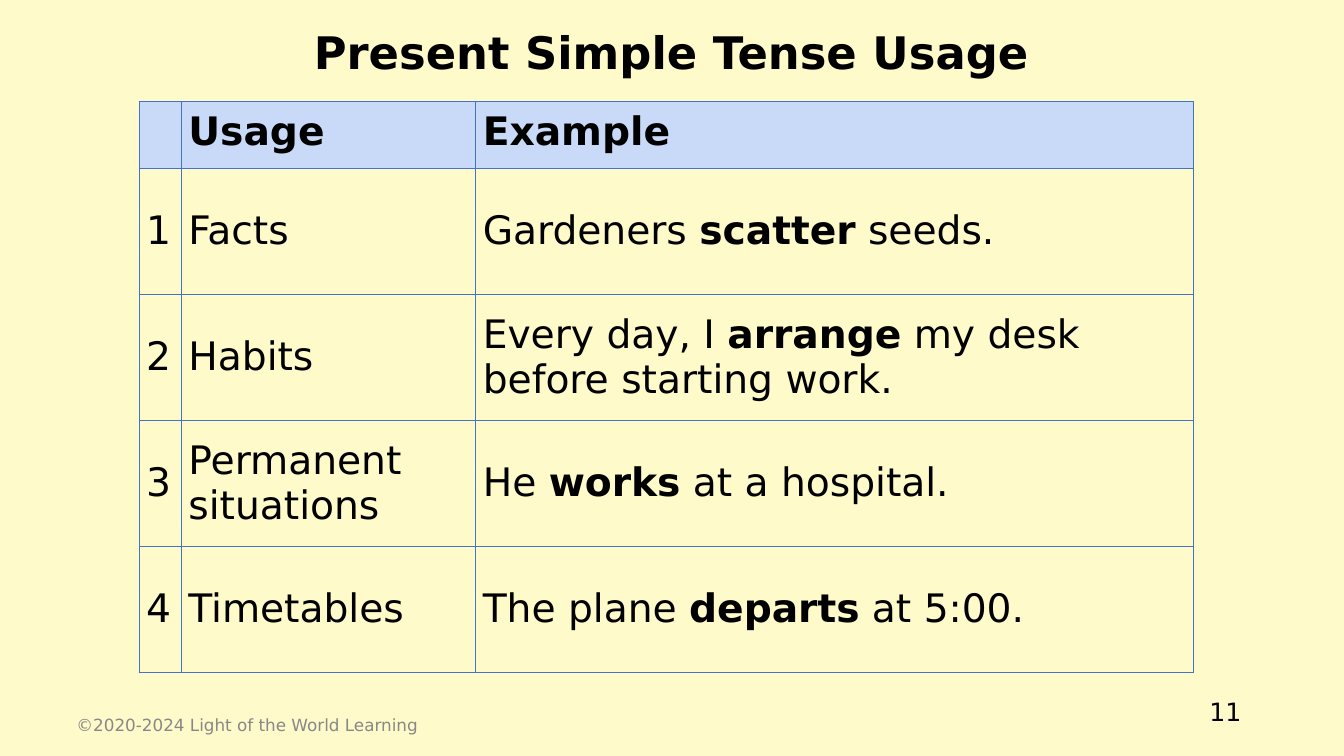
from lxml.etree import SubElement
from pptx import Presentation
from pptx.dml.color import RGBColor
from pptx.enum.text import MSO_ANCHOR, PP_ALIGN
from pptx.oxml.ns import qn
from pptx.util import Inches, Pt

FONT = "DejaVu Sans"
CREAM = RGBColor(0xFE, 0xFA, 0xC9)
HEADER_BLUE = RGBColor(0xC9, 0xDA, 0xF8)
BORDER_BLUE = RGBColor(0x44, 0x72, 0xC4)
BLACK = RGBColor(0, 0, 0)
GRAY = RGBColor(0x88, 0x88, 0x88)

COLUMN_WIDTHS = [0.42, 2.92, 7.12]
ROW_HEIGHTS = [0.66] + [1.25] * 4

# Each example is split into the words before the verb, the verb, and the rest
USAGES = [
    ("Facts", ("Gardeners ", "scatter", " seeds.")),
    ("Habits", ("Every day, I ", "arrange", " my desk before starting work.")),
    ("Permanent situations", ("He ", "works", " at a hospital.")),
    ("Timetables", ("The plane ", "departs", " at 5:00.")),
]


def style_paragraph(para, size, color=BLACK, bold=False):
    para.font.name = FONT
    para.font.size = Pt(size)
    para.font.color.rgb = color
    para.font.bold = bold


def add_label(page, text, area, size, align, color=BLACK, bold=False):
    box = page.shapes.add_textbox(*[Inches(length) for length in area])
    frame = box.text_frame
    frame.word_wrap = True
    frame.vertical_anchor = MSO_ANCHOR.MIDDLE
    para = frame.paragraphs[0]
    para.text = text
    para.alignment = align
    style_paragraph(para, size, color, bold)


deck = Presentation()
deck.slide_width, deck.slide_height = Inches(13.33), Inches(7.5)
page = deck.slides.add_slide(deck.slide_layouts[6])
page.background.fill.solid()
page.background.fill.fore_color.rgb = CREAM

# Page number
add_label(page, "11", (0.79, 6.76, 11.62, 0.6), 18, PP_ALIGN.RIGHT)

# Usage table
table = page.shapes.add_table(
    len(ROW_HEIGHTS), len(COLUMN_WIDTHS), Inches(1.38), Inches(1.01),
    Inches(sum(COLUMN_WIDTHS)), Inches(sum(ROW_HEIGHTS))).table
table.horz_banding = False
for column, width in zip(table.columns, COLUMN_WIDTHS):
    column.width = Inches(width)
for row, height in zip(table.rows, ROW_HEIGHTS):
    row.height = Inches(height)

contents = [("", "Usage", "Example")]
contents += [(str(number), *usage) for number, usage in enumerate(USAGES, 1)]

for row_index, texts in enumerate(contents):
    is_header = row_index == 0
    for column_index, text in enumerate(texts):
        cell = table.cell(row_index, column_index)
        cell.margin_left = cell.margin_right = Inches(0.07)
        cell.margin_top = cell.margin_bottom = Inches(0.07)
        cell.vertical_anchor = MSO_ANCHOR.TOP if is_header else MSO_ANCHOR.MIDDLE

        # Text, with the verb of an example in bold
        para = cell.text_frame.paragraphs[0]
        style_paragraph(para, 28, bold=is_header)
        if isinstance(text, tuple):
            for part_index, part in enumerate(text):
                span = para.add_run()
                span.text = part
                if part_index == 1:
                    span.font.bold = True
        else:
            para.text = text

        # Borders come before the fill in the cell properties
        properties = cell._tc.get_or_add_tcPr()
        for side in ("a:lnL", "a:lnR", "a:lnT", "a:lnB"):
            line = SubElement(properties, qn(side), w=str(Pt(1)))
            line_fill = SubElement(line, qn("a:solidFill"))
            SubElement(line_fill, qn("a:srgbClr"), val=str(BORDER_BLUE))
        if is_header:
            cell.fill.solid()
            cell.fill.fore_color.rgb = HEADER_BLUE
        else:
            cell.fill.background()

# Title and copyright line
add_label(page, "Present Simple Tense Usage", (0.19, 0.09, 12.94, 0.84),
          32, PP_ALIGN.CENTER, bold=True)
add_label(page, "©2020-2024 Light of the World Learning", (0.66, 6.99, 4.5, 0.4),
          12, PP_ALIGN.LEFT, GRAY)

deck.save("out.pptx")
